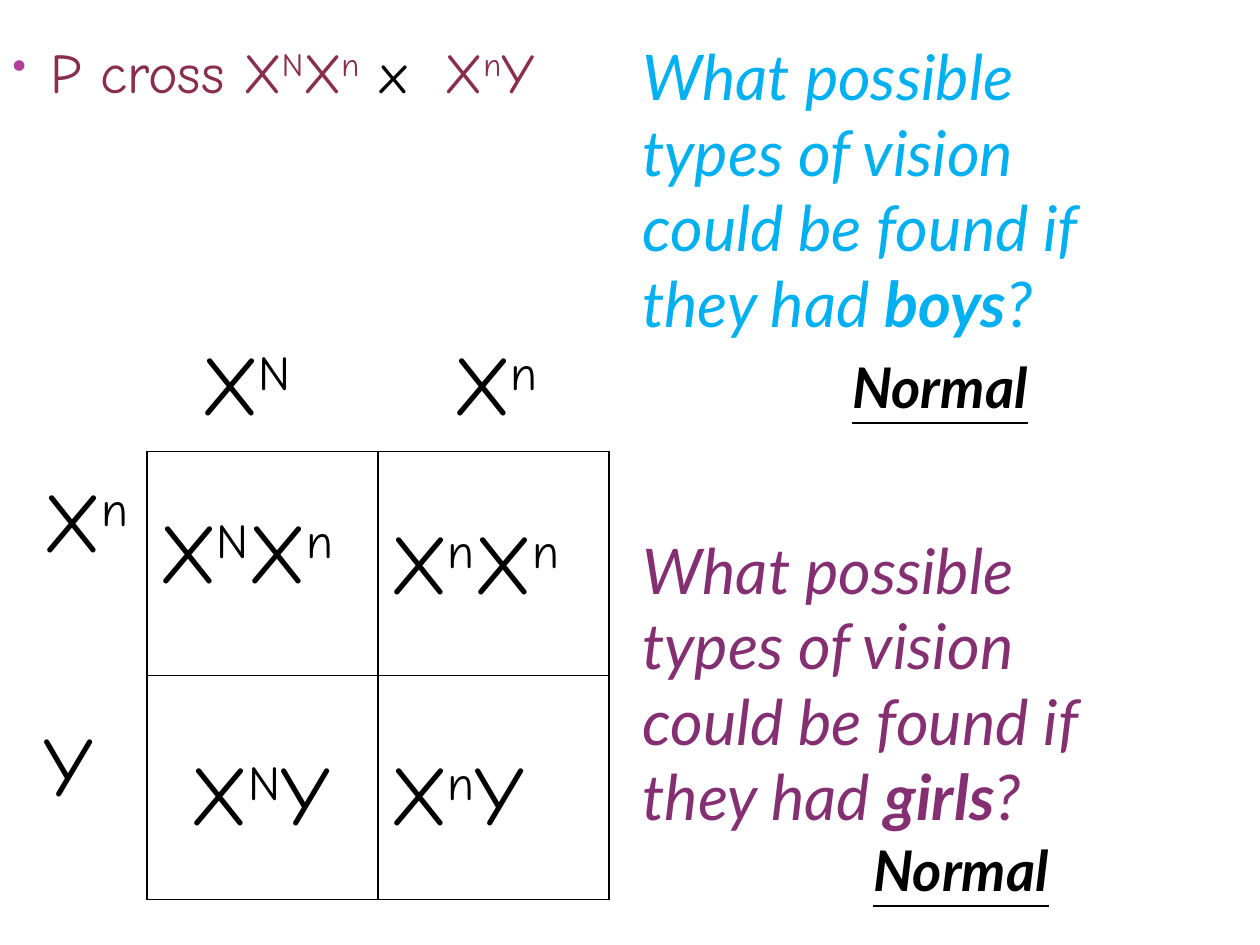
"""Builds a Punnett square slide about the inheritance of colour vision."""
from dataclasses import dataclass

from lxml import etree
from pptx import Presentation
from pptx.dml.color import RGBColor
from pptx.enum.text import MSO_AUTO_SIZE
from pptx.oxml.ns import qn
from pptx.util import Pt

GROW = MSO_AUTO_SIZE.SHAPE_TO_FIT_TEXT
HAND, SANS = "Comic Neue", "Lato"
BLACK, WINE, BLUE, PURPLE, MAGENTA = "000000", "8A2E4E", "00B0F0", "852F73", "B13F9A"
COLUMN, ROW = 132, 128
QUESTION = "What possible types of vision could be found if they had "


@dataclass
class Run:
    text: str
    sup: bool = False
    bold: bool = False
    color: str | None = None


@dataclass
class Style:
    font: str
    size: float
    color: str
    italic: bool = False
    bold: bool | None = None
    underline: bool | None = None


@dataclass
class Box:
    left: float
    top: float
    width: float
    height: float
    lines: list[list[Run]]
    style: Style
    gap: float = 0
    tab: float = 0
    bullet: str = ""


ALLELE = Style(HAND, 48, BLACK)
CROSS = Style(HAND, 32, WINE)
ANSWER = Style(SANS, 32, BLACK, italic=True, bold=True, underline=True)


def rgb(color: str) -> RGBColor:
    """Turn a hex string into a colour."""
    return RGBColor.from_string(color)


def alleles(text: str) -> list[Run]:
    """Split a genotype into base letters and raised N or n."""
    return [Run(ch, sup=ch in "Nn") for ch in text]


def add_child(parent, tag: str, **attrs: str):
    """Append a DrawingML element with its attributes."""
    return etree.SubElement(parent, qn(f"a:{tag}"), attrs)


def add_bullet(p, char: str, color: str) -> None:
    """Give a paragraph a coloured bullet and a hanging indent."""
    pPr = p._p.get_or_add_pPr()
    pPr.set("marL", str(Pt(21.6)))
    pPr.set("indent", str(-Pt(21.6)))
    add_child(add_child(pPr, "buClr"), "srgbClr", val=color)
    add_child(pPr, "buSzPct", val="73000")
    add_child(pPr, "buChar", char=char)


def add_tab(p, position: float) -> None:
    """Add a left tab stop to a paragraph."""
    tabs = add_child(p._p.get_or_add_pPr(), "tabLst")
    add_child(tabs, "tab", pos=str(Pt(position)), algn="l")


def add_box(s, box: Box) -> None:
    """Draw a text box with its paragraphs and runs."""
    sp = s.shapes.add_textbox(Pt(box.left), Pt(box.top), Pt(box.width), Pt(box.height))
    tf = sp.text_frame
    tf.word_wrap = True
    tf.auto_size = MSO_AUTO_SIZE.NONE if box.bullet else GROW
    style = box.style
    for i, runs in enumerate(box.lines):
        p = tf.add_paragraph() if i else tf.paragraphs[0]
        if i:
            p.space_before = Pt(box.gap)
        if box.bullet:
            add_bullet(p, box.bullet, MAGENTA)
        if box.tab:
            add_tab(p, box.tab)
        p.font.name, p.font.size = style.font, Pt(style.size)
        p.font.italic, p.font.bold = style.italic, style.bold
        p.font.underline = style.underline
        mixed = any(run.color for run in runs)
        if not mixed:
            p.font.color.rgb = rgb(style.color)
        for run in runs:
            r = p.add_run()
            r.text = run.text
            if run.sup:
                r.font._element.set("baseline", "30000")
            if run.bold:
                r.font.bold = True
            if mixed:
                r.font.color.rgb = rgb(run.color or style.color)


def add_grid(s, left: float, top: float) -> None:
    """Draw the empty two by two table with thin black borders."""
    frame = s.shapes.add_table(2, 2, Pt(left), Pt(top), Pt(2 * COLUMN), Pt(2 * ROW))
    table = frame.table
    table.first_row = table.horz_banding = False
    for column in table.columns:
        column.width = Pt(COLUMN)
    for row in table.rows:
        row.height = Pt(ROW)
    for cell in table.iter_cells():
        tcPr = cell._tc.get_or_add_tcPr()
        for side in ("lnL", "lnR", "lnT", "lnB"):
            line = add_child(tcPr, side, w=str(Pt(1)))
            add_child(add_child(line, "solidFill"), "srgbClr", val=BLACK)
        cell.fill.background()


def question(top: float, width: float, child: str, color: str) -> Box:
    """Describe the question about one sex of child."""
    runs = [Run(QUESTION), Run(child, bold=True), Run("?")]
    return Box(360, top, width, 225, [runs], Style(SANS, 36, color, italic=True))


def genotype(left: float, top: float, width: float, text: str) -> Box:
    """Describe the genotype inside one cell of the square."""
    return Box(left, top, width, 65.5, [alleles(text)], ALLELE)


def main() -> None:
    """Build and save the slide."""
    prs = Presentation()
    prs.slide_width, prs.slide_height = Pt(720), Pt(540)
    s = prs.slides.add_slide(prs.slide_layouts[6])
    cross = [Run("P cross X"), Run("N", sup=True), Run("X"), Run("n  ", sup=True),
             Run("x  ", color=BLACK), *alleles("XnY")]
    add_box(s, Box(0, 18, 636, 490, [cross], CROSS, bullet="•"))
    add_grid(s, 84, 258)
    boxes = [
        Box(108, 186, 234, 65.5, [alleles("XN\tXn")], ALLELE, tab=144),
        Box(18, 264, 84, 206, [alleles("Xn"), alleles("Y")], ALLELE, gap=82),
        genotype(84, 282, 138, "XNXn"),
        genotype(102, 420, 108, "XNY"),
        genotype(216, 288, 138, "XnXn"),
        genotype(216, 420, 132, "XnY"),
        question(18, 282, "boys", BLUE),
        question(300, 276, "girls", PURPLE),
        Box(480, 198, 125, 46, [[Run("Normal")]], ANSWER),
        Box(492, 474, 125, 46, [[Run("Normal")]], ANSWER),
    ]
    for box in boxes:
        add_box(s, box)
    prs.save("out.pptx")


if __name__ == "__main__":
    main()
